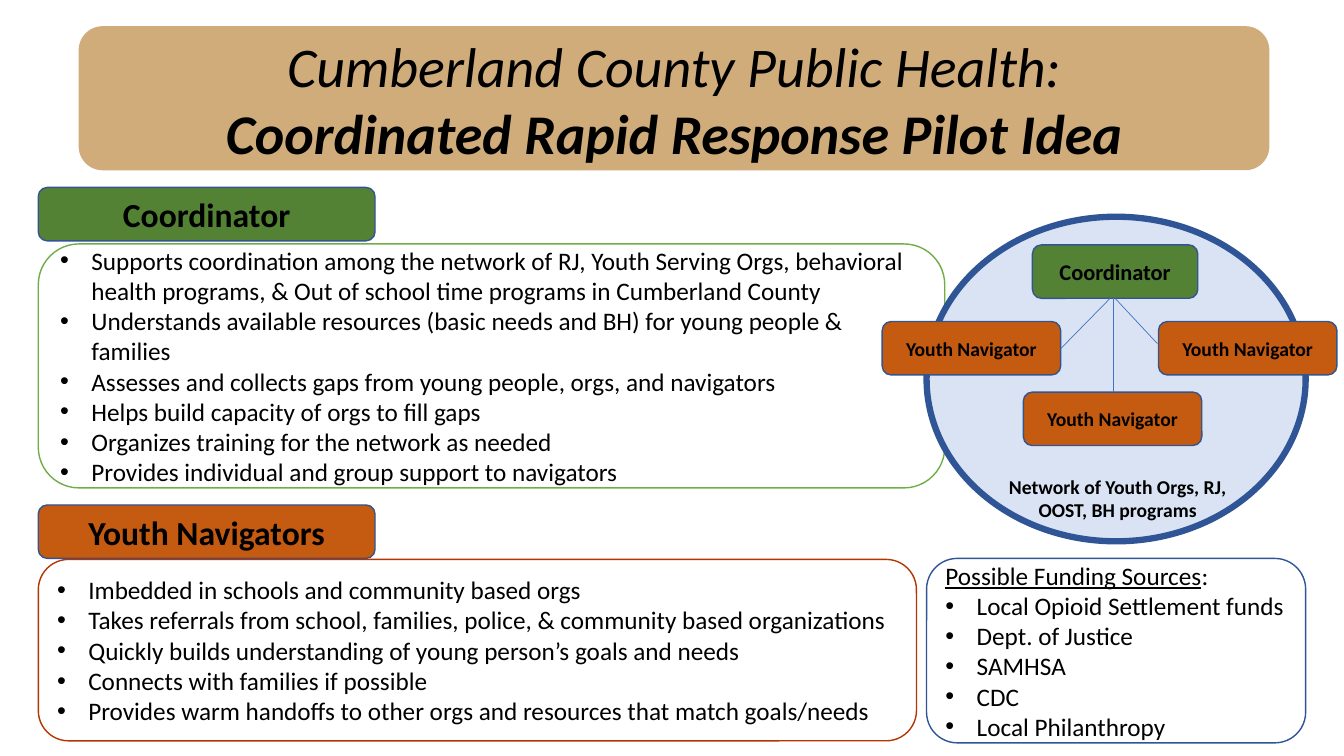
"""Builds the slide on the coordinated rapid response pilot idea."""
import lxml.etree
import pptx
import pptx.dml.color
import pptx.enum.shapes
import pptx.enum.text
import pptx.oxml.ns
import pptx.util

Inches = pptx.util.Inches
RGBColor = pptx.dml.color.RGBColor
Preset = pptx.enum.shapes.MSO_SHAPE
Align = pptx.enum.text.PP_ALIGN
Anchor = pptx.enum.text.MSO_ANCHOR
qn = pptx.oxml.ns.qn

BLACK = RGBColor(0x00, 0x00, 0x00)
WHITE = RGBColor(0xFF, 0xFF, 0xFF)
TAN = RGBColor(0xD0, 0xAC, 0x7B)
GREEN = RGBColor(0x54, 0x82, 0x35)
ORANGE = RGBColor(0xC5, 0x5A, 0x11)
LIGHT_GREEN = RGBColor(0x70, 0xAD, 0x47)
RUST = RGBColor(0xB4, 0x35, 0x00)
PALE_BLUE = RGBColor(0xDA, 0xE3, 0xF3)
BLUE = RGBColor(0x2F, 0x55, 0x97)
LABEL_EDGE = RGBColor(0x32, 0x54, 0x91)
LINK_BLUE = RGBColor(0x44, 0x72, 0xC4)

COORDINATOR_DUTIES = [
    "Supports coordination among the network of RJ, Youth Serving Orgs, behavioral "
    "health programs, & Out of school time programs in Cumberland County",
    "Understands available resources (basic needs and BH) for young people & families",
    "Assesses and collects gaps from young people, orgs, and navigators",
    "Helps build capacity of orgs to fill gaps",
    "Organizes training for the network as needed",
    "Provides individual and group support to navigators",
]
NAVIGATOR_DUTIES = [
    "Imbedded in schools and community based orgs",
    "Takes referrals from school, families, police, & community based organizations",
    "Quickly builds understanding of young person’s goals and needs",
    "Connects with families if possible",
    "Provides warm handoffs to other orgs and resources that match goals/needs",
]
FUNDING_SOURCES = [
    "Local Opioid Settlement funds",
    "Dept. of Justice",
    "SAMHSA",
    "CDC",
    "Local Philanthropy",
]


class SlideBuilder:
    font = "Calibri"
    body_size = 18
    bullet_indent = Inches(0.31)

    def __init__(self, slide):
        self.slide = slide
        self.shapes = slide.shapes

    def start_group(self):
        self.shapes = self.slide.shapes.add_group_shape().shapes

    def style_run(self, run, size, bold=False, italic=False, underline=False):
        run.font.name = self.font
        run.font.size = pptx.util.Pt(size)
        run.font.bold = bold
        run.font.italic = italic
        run.font.underline = underline
        run.font.color.rgb = BLACK

    def block(self, box, fill, line=None, width=1, preset=Preset.ROUNDED_RECTANGLE):
        shape = self.shapes.add_shape(preset, *map(Inches, box))
        shape.shadow.inherit = False
        shape.fill.solid()
        shape.fill.fore_color.rgb = fill
        if line is None:
            shape.line.fill.background()
        else:
            shape.line.color.rgb = line
            shape.line.width = pptx.util.Pt(width)
        shape.text_frame.word_wrap = True
        shape.text_frame.vertical_anchor = Anchor.MIDDLE
        return shape

    def centered(self, shape, text, size, bold=True, italic=False):
        shape.text_frame.text = text
        for paragraph in shape.text_frame.paragraphs:
            paragraph.alignment = Align.CENTER
            self.style_run(paragraph.runs[0], size, bold, italic)

    def title(self, box, text):
        shape = self.block(box, TAN)
        self.centered(shape, text, 40, bold=False, italic=True)
        shape.text_frame.paragraphs[-1].runs[0].font.bold = True

    def label(self, box, text, fill, size):
        self.centered(self.block(box, fill, LABEL_EDGE), text, size)

    def caption(self, box, text, size):
        shape = self.shapes.add_textbox(*map(Inches, box))
        shape.text_frame.word_wrap = True
        self.centered(shape, text, size)

    def bullet_panel(self, box, line, items, heading=None):
        text_frame = self.block(box, WHITE, line).text_frame
        text_frame.text = "\n".join([heading] + items if heading else items)
        for paragraph in text_frame.paragraphs:
            paragraph.alignment = Align.LEFT
            self.style_run(paragraph.runs[0], self.body_size)
        bulleted = text_frame.paragraphs
        if heading:
            title, *bulleted = bulleted
            title.runs[0].font.underline = True
            colon = title.add_run()
            colon.text = ":"
            self.style_run(colon, self.body_size)
        for paragraph in bulleted:
            properties = paragraph._p.get_or_add_pPr()
            properties.set("marL", str(self.bullet_indent))
            properties.set("indent", str(-self.bullet_indent))
            font = lxml.etree.SubElement(properties, qn("a:buFont"))
            font.set("typeface", "Arial")
            bullet = lxml.etree.SubElement(properties, qn("a:buChar"))
            bullet.set("char", "•")

    def link(self, start, end):
        connector = self.shapes.add_connector(
            pptx.enum.shapes.MSO_CONNECTOR.STRAIGHT, *map(Inches, start + end))
        connector.line.color.rgb = LINK_BLUE
        connector.line.width = pptx.util.Pt(0.5)
        lxml.etree.SubElement(connector._element.spPr, qn("a:effectLst"))


def main():
    presentation = pptx.Presentation()
    presentation.slide_width = Inches(13.33)
    presentation.slide_height = Inches(7.5)
    builder = SlideBuilder(presentation.slides.add_slide(presentation.slide_layouts[6]))

    builder.bullet_panel((0.38, 2.42, 8.99, 2.42), LIGHT_GREEN, COORDINATOR_DUTIES)
    builder.label((0.38, 1.86, 3.34, 0.53), "Coordinator", GREEN, 24)
    builder.label((0.38, 5.01, 3.34, 0.53), "Youth Navigators", ORANGE, 24)
    builder.bullet_panel((0.38, 5.55, 8.71, 1.8), RUST, NAVIGATOR_DUTIES)
    builder.title((0.78, 0.26, 11.81, 1.43),
                  "Cumberland County Public Health:\nCoordinated Rapid Response Pilot Idea")
    builder.bullet_panel((9.19, 5.54, 3.76, 1.83), BLUE, FUNDING_SOURCES,
                         "Possible Funding Sources")

    builder.start_group()
    builder.block((9.19, 2.15, 3.76, 3.22), PALE_BLUE, BLUE, 4.5, Preset.OVAL)
    builder.label((10.24, 2.43, 1.64, 0.53), "Coordinator", GREEN, 16)
    for left, top in [(8.75, 3.19), (11.49, 3.19), (10.15, 3.89)]:
        builder.label((left, top, 1.77, 0.53), "Youth Navigator", ORANGE, 14)
    for start_x, end in [(11.01, (10.52, 3.46)), (11.06, (11.48, 3.41)),
                         (11.04, (11.04, 3.89))]:
        builder.link((start_x, 2.96), end)
    builder.caption((9.8, 4.66, 2.57, 0.57),
                    "Network of Youth Orgs, RJ, OOST, BH programs", 14)

    presentation.save("out.pptx")


if __name__ == "__main__":
    main()
